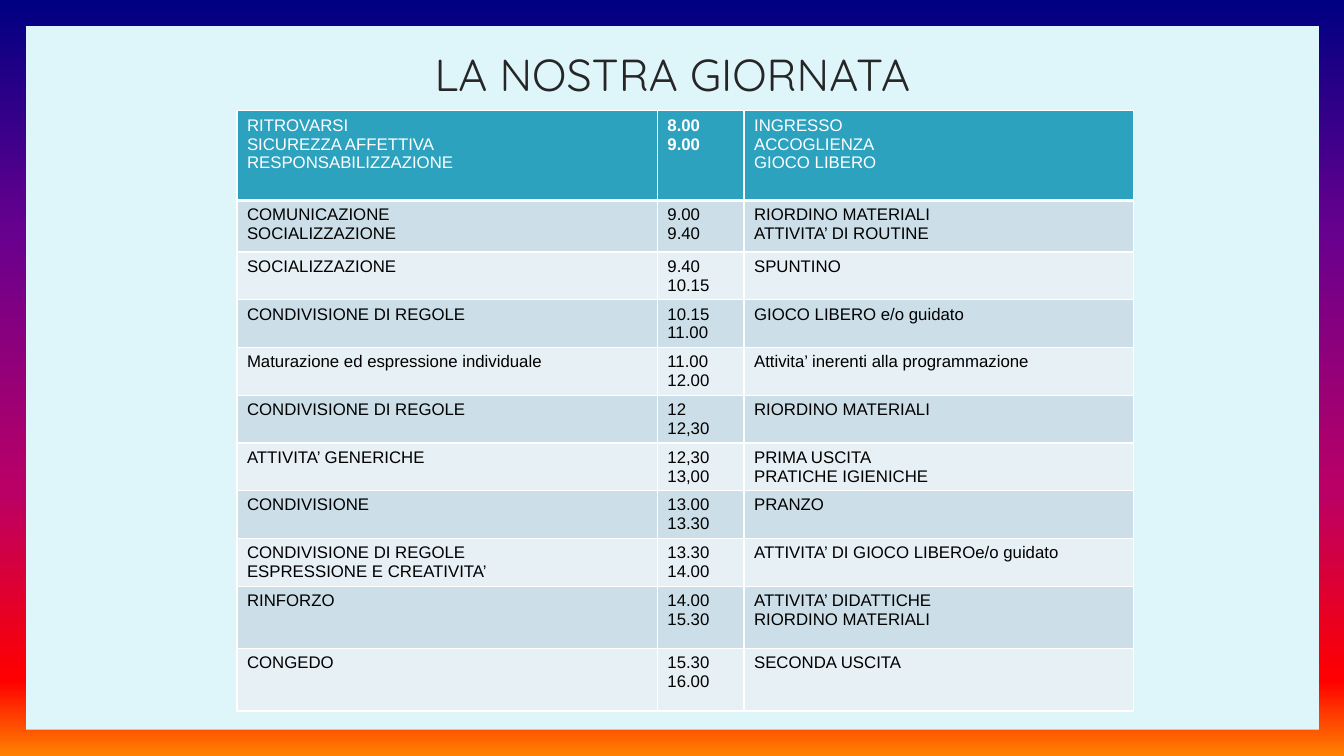
from dataclasses import dataclass

from lxml.etree import SubElement
from pptx import Presentation
from pptx.dml.color import RGBColor
from pptx.enum.shapes import MSO_SHAPE
from pptx.enum.text import MSO_ANCHOR, PP_ALIGN
from pptx.oxml.ns import qn
from pptx.slide import Slide
from pptx.table import _Cell
from pptx.text.text import TextFrame
from pptx.util import Inches, Pt


@dataclass(frozen=True)
class Theme:
    panel: str = "DEF5FA"
    title: str = "262626"
    header: str = "2DA2BF"
    bands: tuple[str, str] = ("CCDFE8", "E7F0F4")
    body: str = "000000"
    white: str = "FFFFFF"
    sunset: tuple[tuple[int, str], ...] = (
        (0, "000082"), (30, "66008F"), (65, "BA0066"), (90, "FF0000"), (100, "FF8200"))
    title_font: str = "Quicksand"
    body_font: str = "Arial"
    title_size: int = 32
    body_size: int = 12


@dataclass(frozen=True)
class Moment:
    goals: str
    hours: str
    activities: str
    height: float = 0.47


THEME = Theme()
COLUMN_WIDTHS = (4.17, 0.86, 3.86)
DAY = (
    Moment("RITROVARSI\nSICUREZZA AFFETTIVA\nRESPONSABILIZZAZIONE", "8.00\n9.00",
           "INGRESSO\nACCOGLIENZA\nGIOCO LIBERO", 0.89),
    Moment("COMUNICAZIONE\nSOCIALIZZAZIONE", "9.00\n9.40",
           "RIORDINO MATERIALI\nATTIVITA’ DI ROUTINE", 0.51),
    Moment("SOCIALIZZAZIONE", "9.40\n10.15", "SPUNTINO"),
    Moment("CONDIVISIONE DI REGOLE", "10.15\n11.00", "GIOCO LIBERO e/o guidato"),
    Moment("Maturazione ed espressione individuale", "11.00\n12.00",
           "Attivita’ inerenti alla programmazione"),
    Moment("CONDIVISIONE DI REGOLE", "12\n12,30", "RIORDINO MATERIALI"),
    Moment("ATTIVITA’ GENERICHE", "12,30\n13,00", "PRIMA USCITA\nPRATICHE IGIENICHE"),
    Moment("CONDIVISIONE", "13.00\n13.30", "PRANZO"),
    Moment("CONDIVISIONE DI REGOLE\nESPRESSIONE E CREATIVITA’", "13.30\n14.00",
           "ATTIVITA’ DI GIOCO LIBEROe/o guidato"),
    Moment("RINFORZO", "14.00\n15.30", "ATTIVITA’ DIDATTICHE\nRIORDINO MATERIALI", 0.62),
    Moment("CONGEDO", "15.30\n16.00", "SECONDA USCITA", 0.62),
)


def write(tf: TextFrame, text: str, font: str, size: int, color: str,
          bold: bool = False) -> None:
    """Write each line of text as a paragraph."""
    for i, line in enumerate(text.split("\n")):
        p = tf.add_paragraph() if i else tf.paragraphs[0]
        r = p.add_run()
        r.text = line
        r.font.name = font
        r.font.size = Pt(size)
        r.font.bold = bold
        r.font.color.rgb = RGBColor.from_string(color)


def add_background(s: Slide) -> None:
    fill = s.background.fill
    fill.gradient()
    fill.gradient_angle = 270
    stops = s.element.find(f".//{qn('p:bg')}//{qn('a:gsLst')}")
    stops.clear()
    for percent, color in THEME.sunset:
        stop = SubElement(stops, qn("a:gs"), pos=str(percent * 1000))
        SubElement(stop, qn("a:srgbClr"), val=color)


def add_panel(s: Slide) -> None:
    sp = s.shapes.add_shape(MSO_SHAPE.RECTANGLE, Inches(0.26), Inches(0.26),
                            Inches(12.82), Inches(6.98))
    sp.shadow.inherit = False
    sp.fill.solid()
    sp.fill.fore_color.rgb = RGBColor.from_string(THEME.panel)
    sp.line.fill.background()
    s.shapes.title.element.addprevious(sp.element)


def add_title(s: Slide, text: str) -> None:
    sp = s.shapes.title
    sp.left, sp.top = Inches(1.17), Inches(0.3)
    sp.width, sp.height = Inches(11), Inches(0.93)
    tf = sp.text_frame
    tf.vertical_anchor = MSO_ANCHOR.MIDDLE
    write(tf, text, THEME.title_font, THEME.title_size, THEME.title)
    p = tf.paragraphs[0]
    p.alignment = PP_ALIGN.CENTER
    p.line_spacing = 0.9


def set_borders(cell: _Cell, top: int, bottom: int) -> None:
    """Draw white borders, with the top and bottom widths in points."""
    tc_pr = cell._tc.get_or_add_tcPr()
    for side, width in (("L", 1), ("R", 1), ("T", top), ("B", bottom)):
        ln = SubElement(tc_pr, qn(f"a:ln{side}"), w=str(Pt(width)))
        fill = SubElement(ln, qn("a:solidFill"))
        SubElement(fill, qn("a:srgbClr"), val=THEME.white)


def add_timetable(s: Slide) -> None:
    table = s.shapes.add_table(
        len(DAY), len(COLUMN_WIDTHS), Inches(2.35), Inches(1.1),
        Inches(sum(COLUMN_WIDTHS)), Inches(sum(m.height for m in DAY))).table
    for column, width in zip(table.columns, COLUMN_WIDTHS):
        column.width = Inches(width)
    for i, moment in enumerate(DAY):
        is_header = i == 0
        table.rows[i].height = Inches(moment.height)
        fill = THEME.header if is_header else THEME.bands[(i - 1) % 2]
        color = THEME.white if is_header else THEME.body
        for j, text in enumerate((moment.goals, moment.hours, moment.activities)):
            cell = table.cell(i, j)
            set_borders(cell, top=3 if i == 1 else 1, bottom=3 if is_header else 1)
            cell.fill.solid()
            cell.fill.fore_color.rgb = RGBColor.from_string(fill)
            write(cell.text_frame, text, THEME.body_font, THEME.body_size, color,
                  bold=is_header and j == 1)


def main() -> None:
    prs = Presentation()
    prs.slide_width, prs.slide_height = Inches(13.33), Inches(7.5)
    s = prs.slides.add_slide(prs.slide_layouts[5])
    add_background(s)
    add_panel(s)
    add_title(s, "LA NOSTRA GIORNATA")
    add_timetable(s)
    prs.save("out.pptx")


if __name__ == "__main__":
    main()
